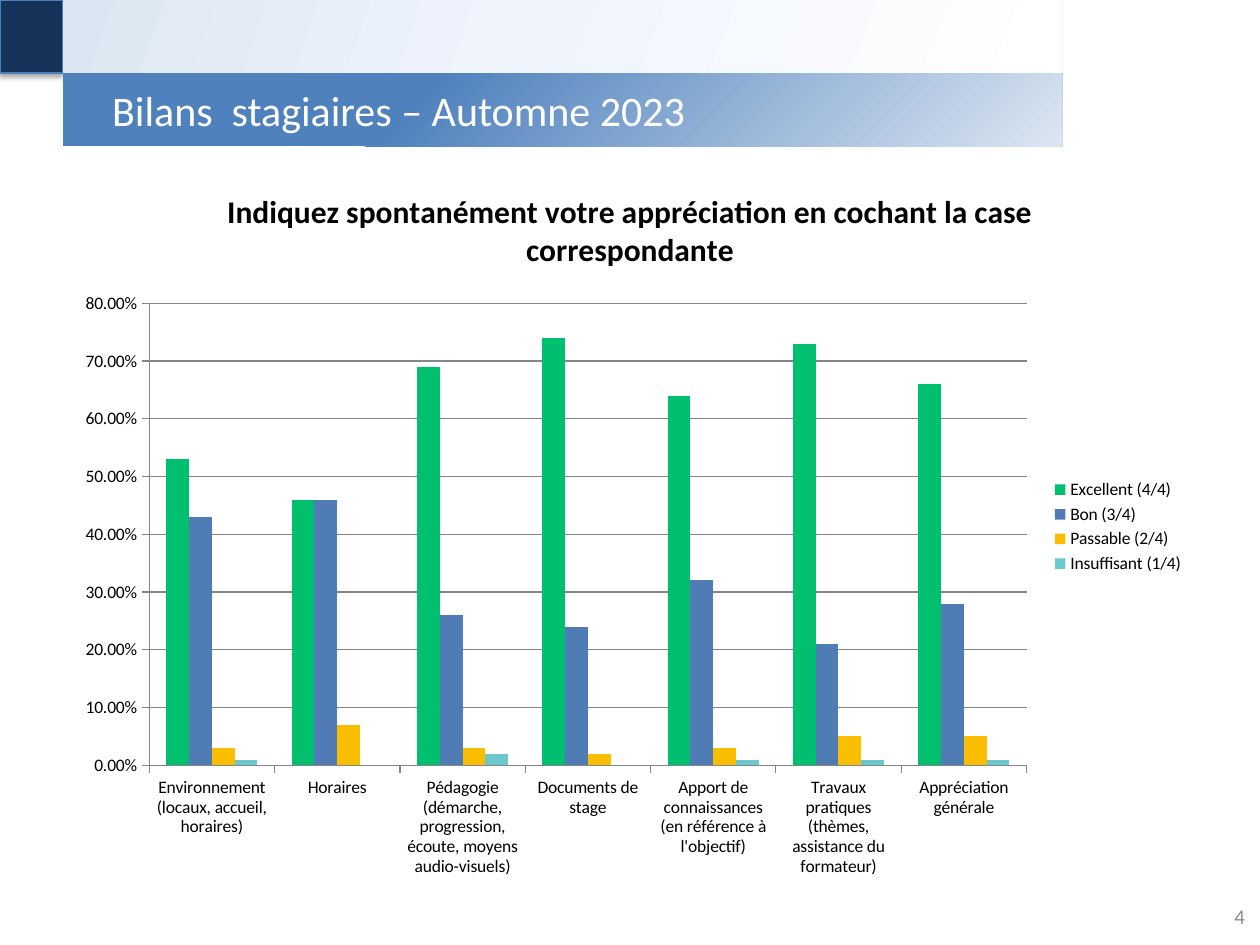
from lxml.etree import SubElement
from pptx import Presentation
from pptx.chart.data import CategoryChartData
from pptx.dml.color import RGBColor
from pptx.enum.chart import XL_CHART_TYPE, XL_LEGEND_POSITION, XL_TICK_MARK
from pptx.enum.shapes import MSO_SHAPE
from pptx.enum.text import MSO_ANCHOR, PP_ALIGN
from pptx.oxml import parse_xml
from pptx.oxml.ns import nsdecls, qn
from pptx.util import Inches, Pt

FONT = "Calibri"
COLORS = {
    "navy": "153258", "outline": "4B7EBC", "title_blue": "4F81BD",
    "pale_blue": "DCE6F2", "mist": "EFF4FD", "white": "FFFFFF",
    "black": "000000", "page_gray": "8C8C8C", "grid": "868686",
}
CATEGORIES = [
    "Environnement (locaux, accueil, horaires)",
    "Horaires",
    "Pédagogie (démarche, progression, écoute, moyens audio-visuels)",
    "Documents de stage",
    "Apport de connaissances (en référence à l'objectif)",
    "Travaux pratiques (thèmes, assistance du formateur)",
    "Appréciation générale",
]
# Rating name, bar colour, share per category
RATINGS = [
    ("Excellent (4/4)", "00BF6F", [0.53, 0.46, 0.69, 0.74, 0.64, 0.73, 0.66]),
    ("Bon (3/4)", "507CB6", [0.43, 0.46, 0.26, 0.24, 0.32, 0.21, 0.28]),
    ("Passable (2/4)", "F9BE00", [0.03, 0.07, 0.03, 0.02, 0.03, 0.05, 0.05]),
    ("Insuffisant (1/4)", "6BC8CD", [0.01, 0, 0.02, 0, 0.01, 0.01, 0.01]),
]


def color(name):
    return RGBColor.from_string(COLORS[name])


def style_font(font, size, color_name, bold=False):
    font.name, font.size, font.bold = FONT, Pt(size), bold
    font.color.rgb = color(color_name)


def add_rectangle(page, left, top, width, height):
    box = page.shapes.add_shape(MSO_SHAPE.RECTANGLE, Inches(left), Inches(top),
                                Inches(width), Inches(height))
    box.shadow.inherit = False
    box.line.fill.background()
    return box


def set_gradient(box, stops, degrees):
    """Fill a box with a linear gradient of (percent, colour name) stops."""
    box.fill.gradient()
    gradient = box._element.spPr.find(qn("a:gradFill"))
    for child in list(gradient):
        gradient.remove(child)
    stop_list = SubElement(gradient, qn("a:gsLst"))
    for percent, name in stops:
        stop = SubElement(stop_list, qn("a:gs"), pos=str(percent * 1000))
        SubElement(stop, qn("a:srgbClr"), val=COLORS[name])
    SubElement(gradient, qn("a:lin"), ang=str(degrees * 60000), scaled="0")


def add_corner_square(page):
    square = add_rectangle(page, 0, 0, 0.5, 0.58)
    square.fill.solid()
    square.fill.fore_color.rgb = color("navy")
    square.line.color.rgb = color("outline")
    square.line.width = Pt(0.75)
    effects = square._element.spPr.find(qn("a:effectLst"))
    effects.append(parse_xml(
        f'<a:outerShdw {nsdecls("a")} blurRad="{Pt(3.1)}" dist="{Pt(1.8)}" '
        f'dir="5400000" rotWithShape="0"><a:srgbClr val="{COLORS["black"]}">'
        '<a:alpha val="35000"/></a:srgbClr></a:outerShdw>'))


def set_text(box, text, size, color_name, alignment):
    box.text_frame.word_wrap = True
    box.text_frame.vertical_anchor = MSO_ANCHOR.MIDDLE
    para = box.text_frame.paragraphs[0]
    para.text = text
    para.alignment = alignment
    style_font(para.font, size, color_name)
    return para


def style_axis(axis):
    axis.format.line.color.rgb = color("grid")
    axis.major_tick_mark = XL_TICK_MARK.OUTSIDE
    axis.minor_tick_mark = XL_TICK_MARK.NONE
    style_font(axis.tick_labels.font, 10, "black")


def add_ratings_chart(page):
    data = CategoryChartData(number_format="0.00%")
    data.categories = CATEGORIES
    for name, _, shares in RATINGS:
        data.add_series(name, shares)
    chart = page.shapes.add_chart(
        XL_CHART_TYPE.COLUMN_CLUSTERED, Inches(0.5), Inches(1.29),
        Inches(9), Inches(5.78), data).chart
    style_font(chart.font, 10, "black")

    # Title and legend
    title = chart.chart_title.text_frame
    title.text = ("Indiquez spontanément votre appréciation "
                  "en cochant la case correspondante")
    style_font(title.paragraphs[0].font, 18, "black", bold=True)
    chart.has_legend = True
    chart.legend.position = XL_LEGEND_POSITION.RIGHT
    chart.legend.include_in_layout = False
    style_font(chart.legend.font, 10, "black")

    # Axes
    style_axis(chart.category_axis)
    values = chart.value_axis
    style_axis(values)
    values.minimum_scale, values.maximum_scale, values.major_unit = 0, 0.8, 0.1
    values.tick_labels.number_format = "0.00%"
    values.tick_labels.number_format_is_linked = False
    values.major_gridlines.format.line.color.rgb = color("grid")

    # Bars
    plot = chart.plots[0]
    plot.gap_width, plot.overlap, plot.vary_by_categories = 150, 0, False
    for series, (_, bar_color, _) in zip(plot.series, RATINGS):
        series.format.fill.solid()
        series.format.fill.fore_color.rgb = RGBColor.from_string(bar_color)


def main():
    deck = Presentation()
    deck.slide_width, deck.slide_height = Inches(10), Inches(7.5)
    page = deck.slides.add_slide(deck.slide_layouts[6])

    # Header band
    add_corner_square(page)
    band = add_rectangle(page, 0.5, 0, 7.93, 0.58)
    set_gradient(band, [(0, "pale_blue"), (45, "mist"), (100, "white")], 20)

    # Slide title
    title_bar = add_rectangle(page, 0.5, 0.58, 7.93, 0.58)
    set_gradient(title_bar, [(0, "title_blue"), (35, "title_blue"),
                             (100, "pale_blue")], 45)
    title_bar.text_frame.margin_left = Inches(0.39)
    set_text(title_bar, "Bilans  stagiaires – Automne 2023", 24, "white",
             PP_ALIGN.LEFT)

    # Page number
    number_box = page.shapes.add_textbox(Inches(9.5), Inches(7.07),
                                         Inches(0.48), Inches(0.4))
    number = set_text(number_box, "4", 12, "page_gray", PP_ALIGN.RIGHT)
    number.space_after = Pt(6)

    add_ratings_chart(page)
    deck.save("out.pptx")


if __name__ == "__main__":
    main()
